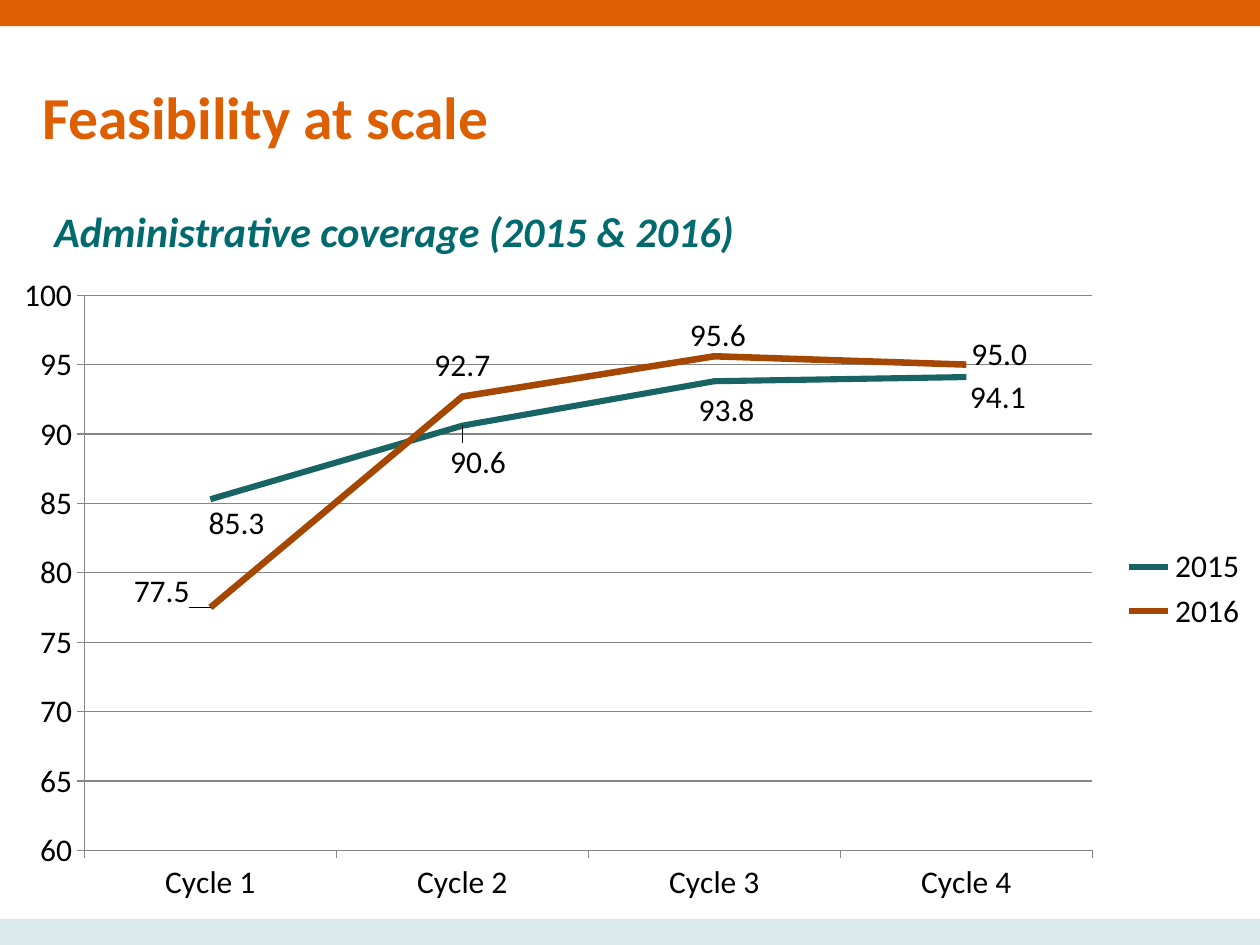
from lxml.etree import SubElement as Sub
from pptx import Presentation
from pptx.chart.data import CategoryChartData as Data
from pptx.dml.color import RGBColor
from pptx.enum.chart import XL_CHART_TYPE as Kind, XL_LABEL_POSITION as Pos
from pptx.enum.chart import XL_LEGEND_POSITION as Side, XL_TICK_MARK as Tick
from pptx.enum.shapes import MSO_SHAPE as Shape
from pptx.enum.text import MSO_ANCHOR as Anchor, MSO_AUTO_SIZE as Auto, PP_ALIGN as Align
from pptx.oxml import parse_xml
from pptx.oxml.ns import nsdecls, qn
from pptx.util import Pt

ORANGE = RGBColor(0xDD, 0x5F, 0x01)
MINT = RGBColor(0xDA, 0xEA, 0xEA)
TEAL = RGBColor(0x00, 0x6A, 0x6F)
PINE = RGBColor(0x18, 0x63, 0x64)
RUST = RGBColor(0xA6, 0x47, 0x01)
GRAY = RGBColor(0x86, 0x86, 0x86)
BLACK = RGBColor(0, 0, 0)
WIDE, HIGH = 720, 540

CYCLES = ["Cycle 1", "Cycle 2", "Cycle 3", "Cycle 4"]
LINES = [
    ("2015", [85.3, 90.6, 93.8, 94.1], PINE, 3.5,
     [(Pos.BELOW, 15, 0), (Pos.BELOW, 9, 7), (Pos.BELOW, 7, 3), (Pos.BELOW, 18, -2)]),
    ("2016", [77.5, 92.7, 95.6, 95.0], RUST, 3.75,
     [(Pos.LEFT, -9, -9), (Pos.ABOVE, 0, -4), (Pos.ABOVE, 2, 2), (Pos.RIGHT, 0, -6)]),
]


def apply(item, **vals):
    for key, val in vals.items():
        setattr(item, key, val)


def place(node, **vals):
    layout = parse_xml(f"<c:layout {nsdecls('c')}><c:manualLayout/></c:layout>")
    for key, val in vals.items():
        Sub(layout[0], qn(f"c:{key}")).set("val", str(val))
    for old in node.findall(qn("c:layout")):
        node.remove(old)
    return layout


class Deck:
    face = "Calibri"

    def __init__(self):
        self.show = Presentation()
        apply(self.show, slide_width=Pt(WIDE), slide_height=Pt(HIGH))
        self.slide = self.show.slides.add_slide(self.show.slide_layouts[5])

    def style(self, font, size, color, **vals):
        apply(font, name=self.face, size=Pt(size), **vals)
        font.color.rgb = color

    def band(self, top, color):
        bar = self.slide.shapes.add_shape(Shape.RECTANGLE, 0, Pt(top), Pt(WIDE), Pt(15))
        bar.shadow.inherit = False
        bar.fill.solid()
        bar.fill.fore_color.rgb = color
        bar.line.fill.background()

    def title(self, text, left, top, width, height):
        box = self.slide.shapes.title
        apply(box, left=Pt(left), top=Pt(top), width=Pt(width), height=Pt(height))
        apply(box.text_frame, text=text, vertical_anchor=Anchor.BOTTOM, auto_size=Auto.NONE,
              margin_left=0, margin_top=0, margin_right=0, margin_bottom=0)
        para = box.text_frame.paragraphs[0]
        apply(para, alignment=Align.LEFT, line_spacing=0.9)
        self.style(para.runs[0].font, 34, ORANGE, bold=True)

    def text(self, text, left, top, width, height):
        box = self.slide.shapes.add_textbox(Pt(left), Pt(top), Pt(width), Pt(height))
        apply(box.text_frame, text=text, word_wrap=True, auto_size=Auto.SHAPE_TO_FIT_TEXT)
        self.style(box.text_frame.paragraphs[0].runs[0].font, 24, TEAL, bold=True, italic=True)

    def stroke(self, line, color, width):
        line.color.rgb = color
        line.width = Pt(width)

    def chart(self, left, top, width, height):
        data = Data(number_format="#,##0.0")
        data.categories = CYCLES
        for name, vals, *_ in LINES:
            data.add_series(name, vals)
        chart = self.slide.shapes.add_chart(
            Kind.LINE, Pt(left), Pt(top), Pt(width), Pt(height), data).chart
        apply(chart, has_title=False, has_legend=True)
        apply(chart.legend, position=Side.RIGHT, include_in_layout=False)
        self.style(chart.font, 18, BLACK)
        axis = chart.value_axis
        apply(axis, minimum_scale=60, maximum_scale=100, major_unit=5, has_major_gridlines=True)
        apply(axis.tick_labels, number_format="General", number_format_is_linked=False)
        self.stroke(axis.major_gridlines.format.line, GRAY, 0.75)
        for each in (axis, chart.category_axis):
            each.major_tick_mark = Tick.OUTSIDE
            self.stroke(each.format.line, GRAY, 0.75)
        plot = chart.plots[0]
        plot.vary_by_categories = False
        for line, (_, _, color, thick, spots) in zip(plot.series, LINES):
            line.smooth = False
            self.stroke(line.format.line, color, thick)
            apply(line.data_labels, show_value=True, number_format="#,##0.0",
                  number_format_is_linked=False)
            for num, (pos, *_) in enumerate(spots):
                line.points[num].data_label.position = pos
            for node, (_, dx, dy) in zip(line._element.xpath(".//c:dLbl"), spots):
                node.insert(1, place(node, x=round(dx / width, 4), y=round(dy / height, 4)))
        area = chart._chartSpace.xpath(".//c:plotArea")[0]
        area.insert(0, place(area, layoutTarget="inner", xMode="edge", yMode="edge",
                             x=0.067, y=0.049, w=0.8, h=0.853))


def main():
    deck = Deck()
    deck.band(0, ORANGE)
    deck.band(HIGH - 15, MINT)
    deck.chart(0, 150.5, WIDE, 372)
    deck.title("Feasibility at scale", 24, 35, 520, 52)
    deck.text("Administrative coverage (2015 & 2016)", 24, 114, 466, 36)
    deck.show.save("out.pptx")


if __name__ == "__main__":
    main()
